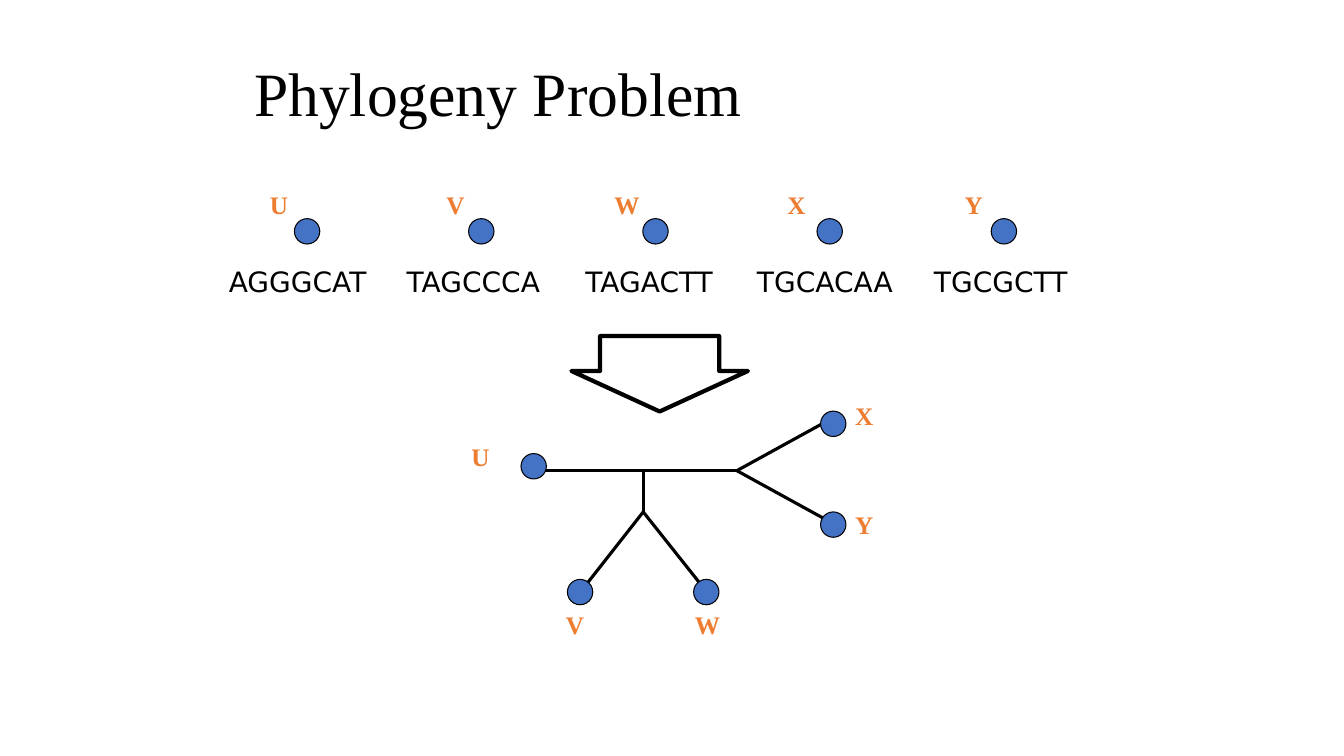
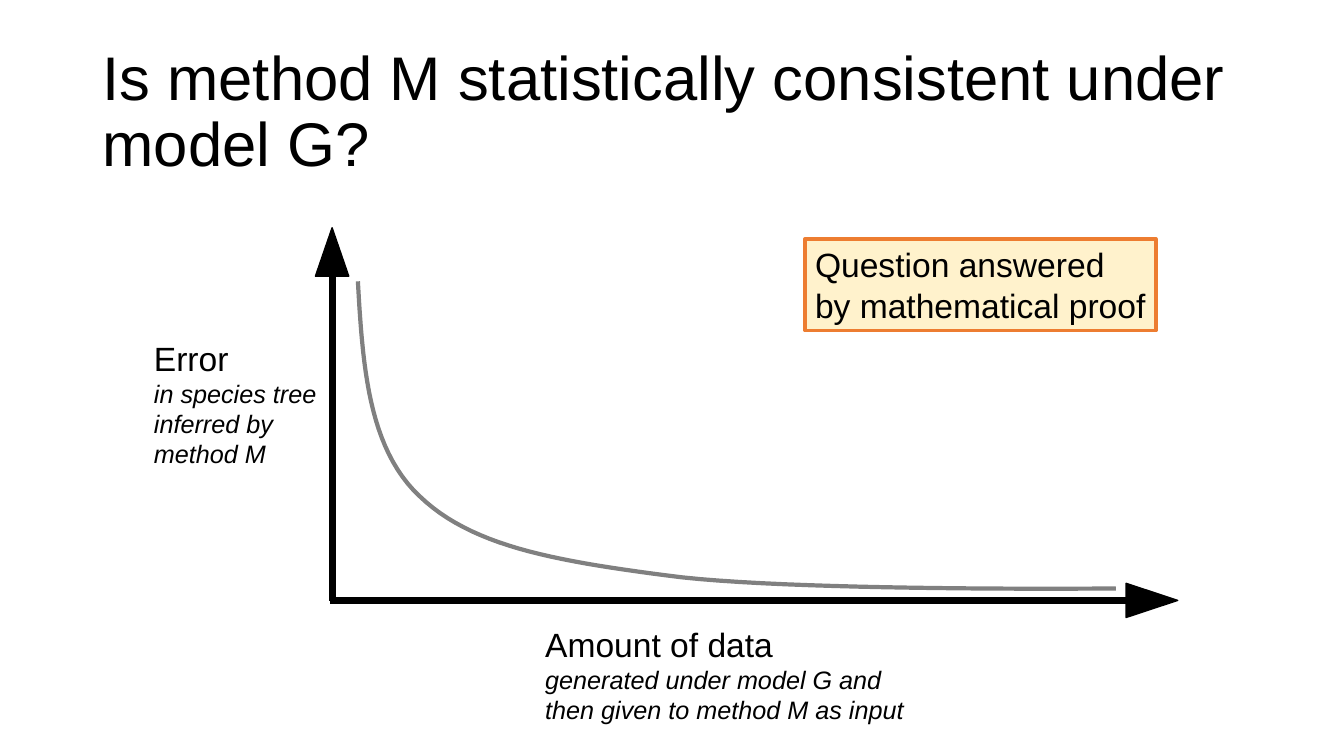
"""Build two slides: the phylogeny problem and statistical consistency."""
from lxml.etree import SubElement
from pptx import Presentation
from pptx.dml.color import RGBColor as RGB
from pptx.enum.shapes import MSO_CONNECTOR as LINK, MSO_SHAPE as SHAPE
from pptx.enum.text import MSO_ANCHOR as ANCHOR, PP_ALIGN as ALIGN
from pptx.oxml.ns import qn
from pptx.util import Cm, Pt

BLACK = RGB(0x00, 0x00, 0x00)
BLUE = RGB(0x44, 0x72, 0xC4)
ORANGE = RGB(0xED, 0x7D, 0x31)
CREAM = RGB(0xFF, 0xF2, 0xCC)
GRAY = RGB(0x80, 0x80, 0x80)
SANS, SERIF, PLAIN = "Arial", "Times New Roman", "DejaVu Sans"

DOT, TAG_W, SEQ_W = 0.64, 1.2, 4.2
DOT_X, DOT_STEP = 7.42, 4.39
SEQ_X, SEQ_STEP = 7.5, 4.43
TAXA = [("U", "AGGGCAT", 7.03), ("V", "TAGCCCA", 11.48),
        ("W", "TAGACTT", 15.8), ("X", "TGCACAA", 20.07),
        ("Y", "TGCGCTT", 24.54)]

FORK, JOIN, SPLIT = (16.21, 12.9), (16.21, 11.86), (18.57, 11.86)
EDGES = [((14.53, 15.04), FORK), ((17.91, 15.04), FORK),
         (SPLIT, (13.54, 11.86)), (JOIN, FORK),
         ((20.88, 13.13), SPLIT), ((20.88, 10.59), SPLIT)]
LEAVES = [("U", (13.13, 11.43), (12.11, 11)),
          ("V", (14.3, 14.6), (14.49, 15.24)),
          ("W", (17.48, 14.6), (17.83, 15.24)),
          ("X", (20.68, 10.36), (21.78, 9.96)),
          ("Y", (20.68, 12.9), (21.78, 12.7))]

AXES = [((8.38, 6.78), (8.38, 15.14)), ((8.31, 15.14), (28.37, 15.14))]
TIPS = [((7.95, 5.74, 0.84, 1.22), 0), ((28.6, 14.48, 0.86, 1.3), 90)]
CURVE = [(9.02, 7.09), (9.14, 9.17), (9.27, 11.28), (10.57, 12.5),
         (11.86, 13.74), (13.87, 14.12), (16.79, 14.5),
         (19.71, 14.91), (28.12, 14.83), (28.12, 14.83)]
NOTES = [((3.63, 8.38, 5.36, 3.58), "Error",
          "in species tree\ninferred by\nmethod M"),
         ((13.49, 15.6, 9.9, 2.82), "Amount of data",
          "generated under model G and\nthen given to method M as input")]
PROOF = "Question answered\nby mathematical proof"


def write(par, text, size, font=SANS, color=BLACK, bold=False, slant=False):
    for i, part in enumerate(text.split("\n")):
        if i:
            par.add_line_break()
        run = par.add_run()
        run.text = part
        face = run.font
        face.name, face.size, face.color.rgb = font, Pt(size), color
        face.bold, face.italic = bold, slant


def add_page(deck, text, box, font):
    page = deck.slides.add_slide(deck.slide_layouts[5])
    title = page.shapes.title
    title.left, title.top, title.width, title.height = map(Cm, box)
    frame = title.text_frame
    frame.vertical_anchor, frame.word_wrap = ANCHOR.MIDDLE, True
    par = frame.paragraphs[0]
    par.alignment, par.line_spacing = ALIGN.LEFT, 0.9
    write(par, text, 44, font)
    return page.shapes


def add_text(shapes, box):
    frame = shapes.add_textbox(*map(Cm, box)).text_frame
    frame.word_wrap = True
    return frame


def add_label(shapes, mid, top, wide, text, size, font, **look):
    frame = add_text(shapes, (mid - wide / 2, top, wide, 1.1))
    frame.margin_left = frame.margin_right = 0
    par = frame.paragraphs[0]
    par.alignment = ALIGN.CENTER
    write(par, text, size, font, **look)


def add_tag(shapes, mid, top, name):
    add_label(shapes, mid, top, TAG_W, name, 18, SERIF,
              color=ORANGE, bold=True)


def paint(shape, fill, line, width):
    shape.shadow.inherit = False
    if fill is None:
        shape.fill.background()
    else:
        shape.fill.solid()
        shape.fill.fore_color.rgb = fill
    shape.line.color.rgb, shape.line.width = line, Pt(width)


def add_form(shapes, kind, box, fill, line=BLACK, width=0.75):
    shape = shapes.add_shape(kind, *map(Cm, box))
    paint(shape, fill, line, width)
    return shape


def add_dot(shapes, left, top):
    add_form(shapes, SHAPE.OVAL, (left, top, DOT, DOT), BLUE)


def add_line(shapes, start, end, width):
    link = shapes.add_connector(LINK.STRAIGHT, *map(Cm, start + end))
    link.line.color.rgb, link.line.width = BLACK, Pt(width)
    SubElement(link._element.spPr, qn("a:effectLst"))


def trace(knots, steps=24):
    spots = []
    for i in range(0, len(knots) - 1, 3):
        for k in range(1, steps + 1):
            t = k / steps
            u = 1 - t
            mix = (u ** 3, 3 * u * u * t, 3 * u * t * t, t ** 3)
            spots.append(tuple(
                Cm(sum(m * knot[axis] for m, knot in zip(mix, knots[i:i + 4])))
                for axis in (0, 1)))
    return spots


def draw_tree(deck):
    shapes = add_page(deck, "Phylogeny Problem", (6.15, 0.85, 21.6, 3.18), SERIF)
    for start, end in EDGES:
        add_line(shapes, start, end, 2.25)
    for i, (name, seq, mid) in enumerate(TAXA):
        add_dot(shapes, DOT_X + i * DOT_STEP, 5.51)
        add_tag(shapes, mid, 4.65, name)
        add_label(shapes, SEQ_X + i * SEQ_STEP, 6.53, SEQ_W, seq, 20, PLAIN)
    arrow = add_form(shapes, SHAPE.DOWN_ARROW, (14.4, 8.47, 4.45, 1.9),
                     None, width=3)
    arrow.adjustments[0], arrow.adjustments[1] = 0.675, 0.537
    for name, spot, tag in LEAVES:
        add_dot(shapes, *spot)
        add_tag(shapes, *tag, name)


def draw_graph(deck):
    shapes = add_page(deck, "Is method M statistically consistent under model G?",
                      (2.33, 1.02, 29.21, 3.68), SANS)
    for start, end in AXES:
        add_line(shapes, start, end, 5)
    pen = shapes.build_freeform(*map(Cm, CURVE[0]))
    pen.add_line_segments(trace(CURVE), close=False)
    paint(pen.convert_to_shape(), None, GRAY, 3)
    for box, turn in TIPS:
        tip = add_form(shapes, SHAPE.ISOSCELES_TRIANGLE, box, BLACK, width=1)
        tip.rotation = turn
    for box, head, body in NOTES:
        frame = add_text(shapes, box)
        write(frame.paragraphs[0], head, 24)
        write(frame.add_paragraph(), body, 18, slant=True)
    card = add_form(shapes, SHAPE.RECTANGLE, (20.29, 6.02, 8.84, 2.31),
                    CREAM, ORANGE, 2.5)
    frame = card.text_frame
    frame.word_wrap = True
    frame.paragraphs[0].alignment = ALIGN.LEFT
    write(frame.paragraphs[0], PROOF, 24)


def main():
    deck = Presentation()
    deck.slide_width, deck.slide_height = Cm(33.87), Cm(19.05)
    draw_tree(deck)
    draw_graph(deck)
    deck.save("out.pptx")


if __name__ == "__main__":
    main()
